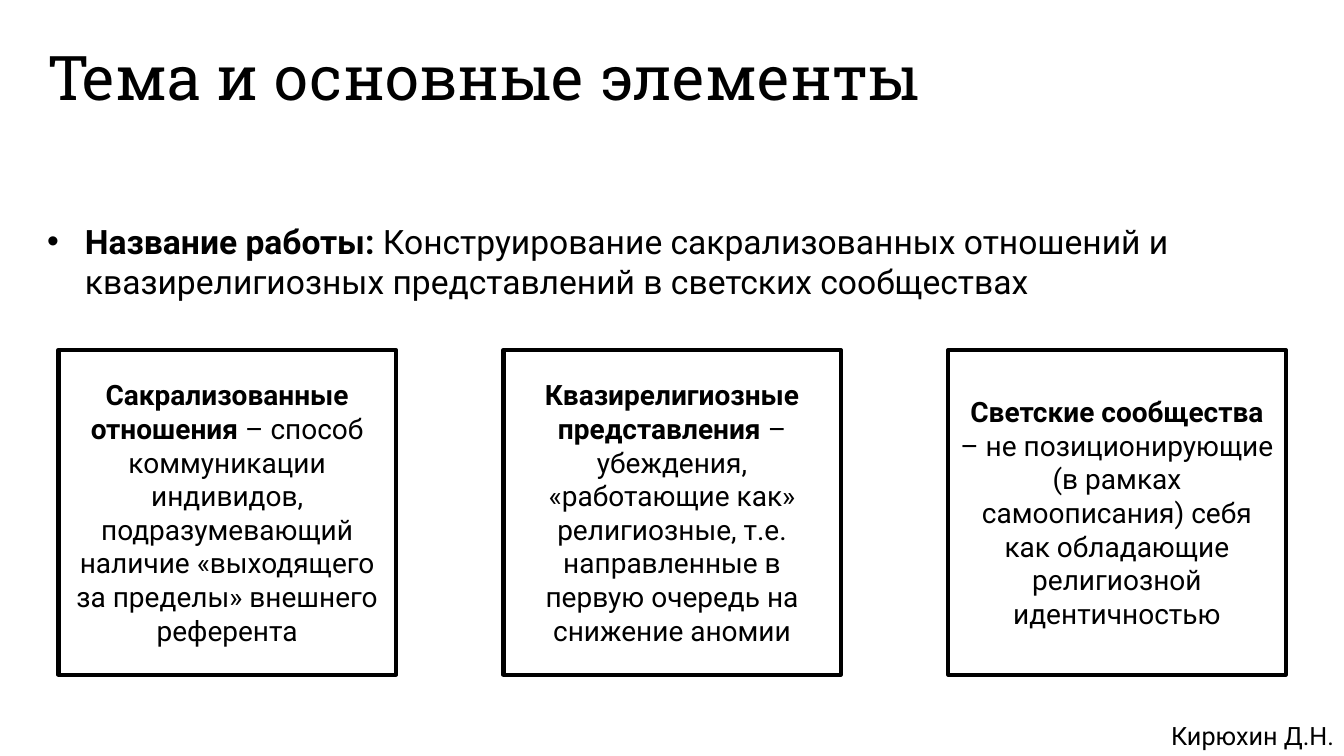
from lxml import etree
from pptx import Presentation
from pptx import util as u
from pptx.dml.color import RGBColor
from pptx.enum import shapes, text
from pptx.oxml.ns import qn

Pt = u.Pt
COLORS = {"ink": "000000", "paper": "FFFFFF"}
ALIGN = text.PP_ALIGN


def write(s, plain, bold="", size=20, font="Roboto", align=ALIGN.LEFT):
    """Put an optional bold lead and plain text into a shape."""
    tf = s.text_frame
    tf.word_wrap = True
    p = tf.paragraphs[0]
    p.alignment = align
    for content, heavy in ((bold, True), (plain, False)):
        if content:
            r = p.add_run()
            r.text = content
            r.font.size = Pt(size)
            r.font.name = font
            r.font.bold = heavy
            r.font.color.rgb = RGBColor.from_string(COLORS["ink"])
    return p


prs = Presentation()
prs.slide_width, prs.slide_height = Pt(960), Pt(540)
slide = prs.slides.add_slide(prs.slide_layouts[6])

# Title
title = slide.shapes.add_textbox(Pt(26.6), Pt(24.5), Pt(813), Pt(60.5))
write(title, "Тема и основные элементы", size=44, font="Roboto Slab")

# Bulleted name of the work
topic = slide.shapes.add_textbox(Pt(26.6), Pt(154), Pt(894), Pt(65.5))
p = write(topic, "Конструирование сакрализованных отношений и "
          "квазирелигиозных представлений в светских сообществах",
          bold="Название работы: ", size=24)
p.space_before = p.space_after = Pt(12)
pPr = p._p.get_or_add_pPr()
pPr.set("marL", str(Pt(27)))
pPr.set("indent", str(-Pt(27)))
etree.SubElement(pPr, qn("a:buFont")).set("typeface", "Arial")
etree.SubElement(pPr, qn("a:buChar")).set("char", "•")

# Three definitions, evenly spaced
definitions = [
    ("Сакрализованные отношения ",
     "– способ коммуникации индивидов, подразумевающий наличие "
     "«выходящего за пределы» внешнего референта"),
    ("Квазирелигиозные представления ",
     "– убеждения, «работающие как» религиозные, т.е. направленные "
     "в первую очередь на снижение аномии"),
    ("Светские сообщества ",
     "– не позиционирующие (в рамках самоописания) себя как обладающие "
     "религиозной идентичностью"),
]
for i, (term, meaning) in enumerate(definitions):
    box = slide.shapes.add_shape(shapes.MSO_SHAPE.RECTANGLE,
                                 Pt(41.8 + i * 317.8), Pt(250), Pt(241), Pt(232))
    box.shadow.inherit = False
    box.fill.solid()
    box.fill.fore_color.rgb = RGBColor.from_string(COLORS["paper"])
    box.line.color.rgb = RGBColor.from_string(COLORS["ink"])
    box.line.width = Pt(3)
    box.text_frame.vertical_anchor = text.MSO_ANCHOR.MIDDLE
    write(box, meaning, bold=term, align=ALIGN.CENTER)

# Author
author = slide.shapes.add_textbox(Pt(584.5), Pt(511), Pt(375.5), Pt(29))
write(author, "Кирюхин Д.Н.", size=18, align=ALIGN.RIGHT)

prs.save("out.pptx")
